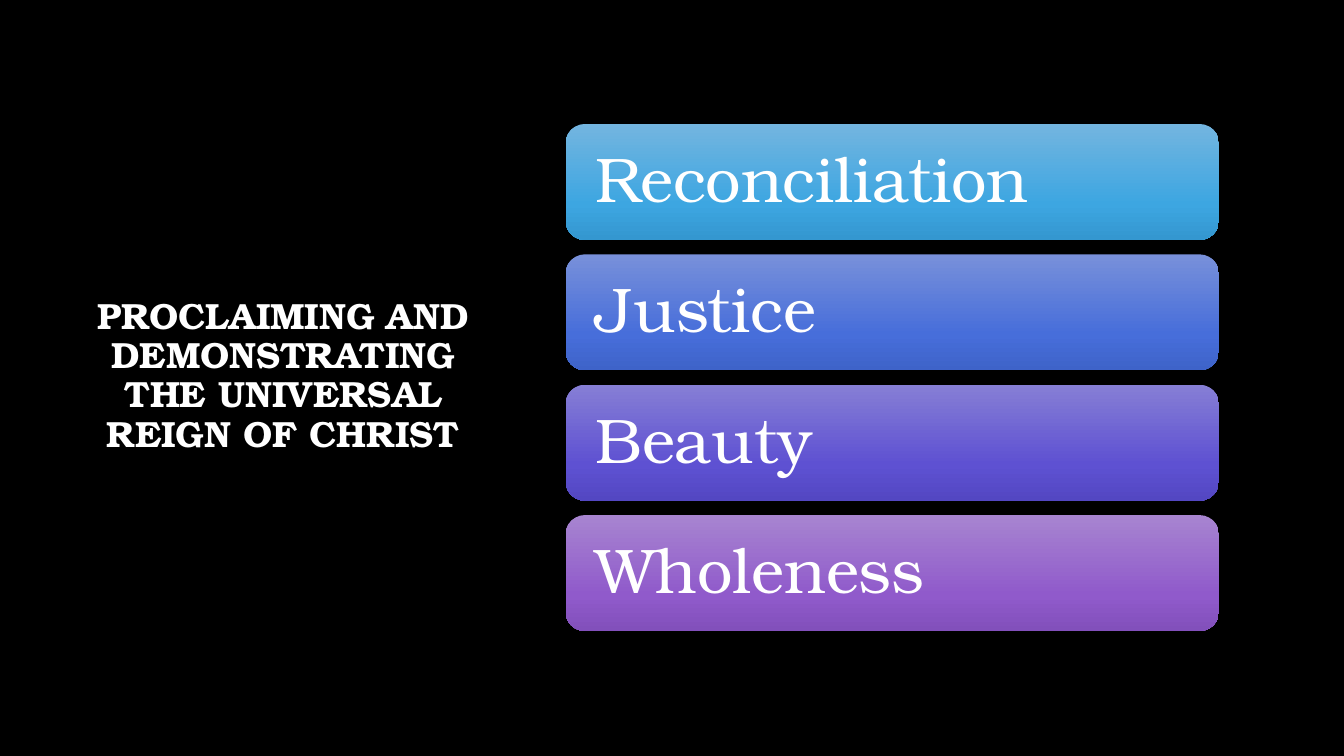
from copy import deepcopy
from dataclasses import dataclass

from pptx import Presentation
from pptx import util as u
from pptx.dml.color import RGBColor
from pptx.enum import shapes, text
from pptx.oxml import ns


@dataclass(frozen=True)
class Theme:
    back: str = "000000"
    ink: str = "FFFFFF"
    font: str = "TeX Gyre Bonum"
    head: int = 26
    body: int = 45
    stops: tuple = (0, 0.69, 1)
    blends: tuple = (
        ("73B5E0", "3DA6E1", "3497D0"),
        ("7890DA", "476EDA", "3E63C9"),
        ("867ED5", "5E51D2", "5347C2"),
        ("A784D0", "905ACB", "8250BB"),
    )


def apply(item, form):
    for key, value in form.items():
        setattr(item, key, value)


class Deck:
    def __init__(self, theme):
        self.theme = theme
        self.file = Presentation()
        apply(self.file, {"slide_width": u.Inches(13.33), "slide_height": u.Inches(7.5)})
        self.slide = self.file.slides.add_slide(self.file.slide_layouts[5])
        fill = self.slide.background.fill
        fill.solid()
        fill.fore_color.rgb = RGBColor.from_string(theme.back)

    def label(self, shape, words, size, bold, align, inset):
        frame = shape.text_frame
        frame.text = words
        side, edge = map(u.Inches, inset)
        apply(frame, {
            "word_wrap": True,
            "auto_size": text.MSO_AUTO_SIZE.NONE,
            "vertical_anchor": text.MSO_ANCHOR.MIDDLE,
            "margin_left": side, "margin_right": side,
            "margin_top": edge, "margin_bottom": edge,
        })
        para = frame.paragraphs[0]
        apply(para, {"alignment": align, "line_spacing": 0.9})
        font = para.runs[0].font
        apply(font, {"name": self.theme.font, "size": u.Pt(size), "bold": bold})
        font.color.rgb = RGBColor.from_string(self.theme.ink)

    def title(self, words, left, top, width, height):
        shape = self.slide.shapes.title
        apply(shape, {
            "left": u.Inches(left), "top": u.Inches(top),
            "width": u.Inches(width), "height": u.Inches(height),
        })
        self.label(shape, words, self.theme.head, True, text.PP_ALIGN.CENTER, (0.1, 0.05))

    def blend(self, shape, colors):
        fill = shape.fill
        fill.gradient()
        fill.gradient_angle = 270
        stops = shape.element.spPr.find(ns.qn("a:gradFill")).find(ns.qn("a:gsLst"))
        stops.append(deepcopy(stops[0]))
        for stop, place, color in zip(fill.gradient_stops, self.theme.stops, colors):
            stop.position = place
            stop.color.rgb = RGBColor.from_string(color)

    def bar(self, words, colors, left, top, width, height):
        box = map(u.Inches, (left, top, width, height))
        shape = self.slide.shapes.add_shape(shapes.MSO_SHAPE.ROUNDED_RECTANGLE, *box)
        shape.shadow.inherit = False
        shape.line.fill.background()
        self.blend(shape, colors)
        self.label(shape, words, self.theme.body, False, text.PP_ALIGN.LEFT, (0.24, 0.24))


def main():
    theme = Theme()
    deck = Deck(theme)
    deck.title("PROCLAIMING AND DEMONSTRATING THE UNIVERSAL REIGN OF CHRIST",
               0.82, 0.67, 3.98, 6.13)
    names = ("Reconciliation", "Justice", "Beauty", "Wholeness")
    first, last = 1.23, 5.11
    step = (last - first) / (len(names) - 1)
    for row, (name, colors) in enumerate(zip(names, theme.blends)):
        deck.bar(name, colors, 5.61, first + row * step, 6.48, 1.15)
    deck.file.save("out.pptx")


if __name__ == "__main__":
    main()
